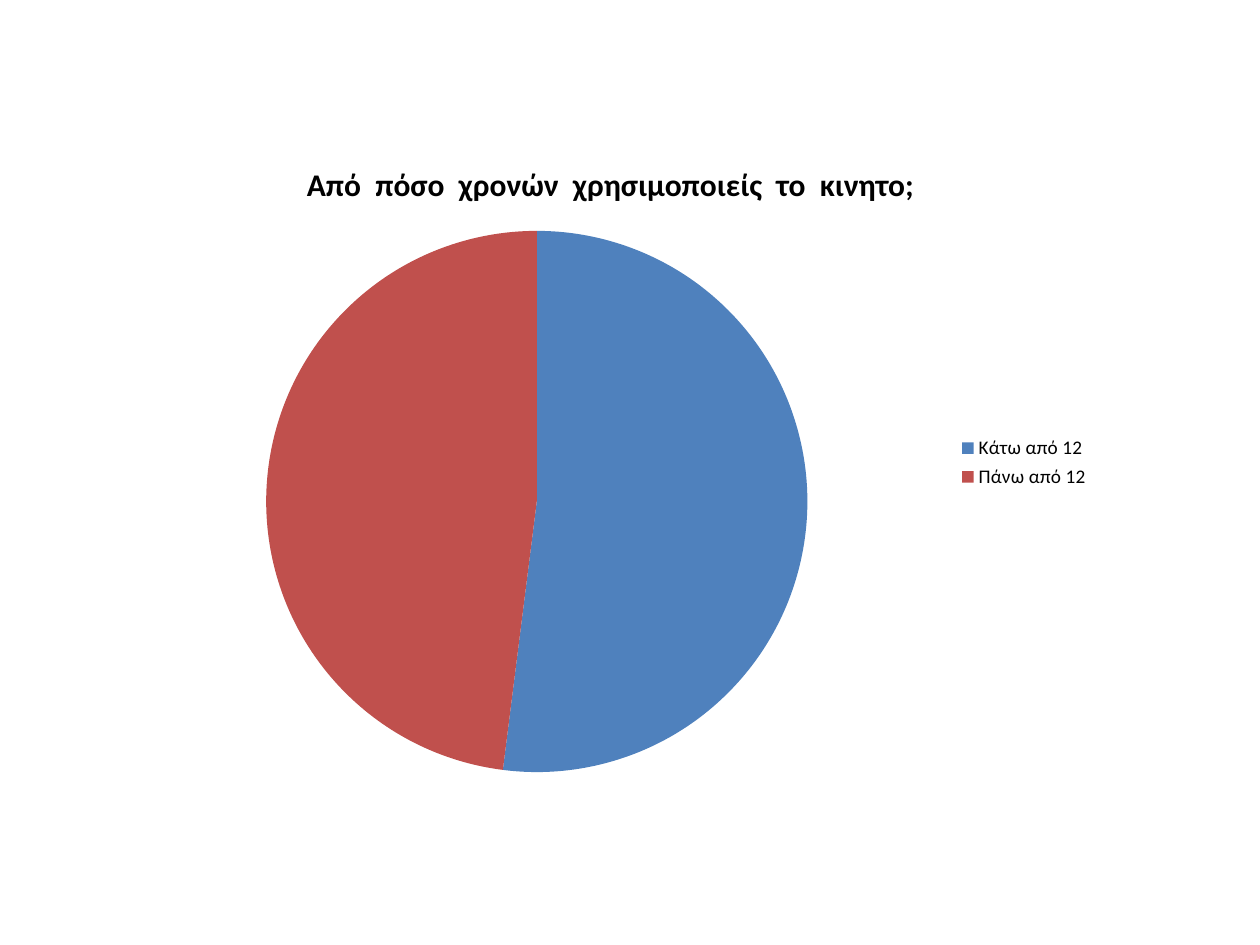
"""Build a slide with a pie chart of the age at which mobile phone use began."""
from lxml.etree import SubElement
from pptx import Presentation
from pptx.chart.data import CategoryChartData
from pptx.dml.color import RGBColor
from pptx.enum.chart import XL_CHART_TYPE, XL_LEGEND_POSITION
from pptx.oxml.ns import qn
from pptx.util import Cm, Pt

BLUE = RGBColor(0x4F, 0x81, 0xBD)
RED = RGBColor(0xC0, 0x50, 0x4D)
BLACK = RGBColor(0, 0, 0)
FONT = "Calibri"

QUESTION = "Από  πόσο  χρονών  χρησιμοποιείς  το  κινητο;"
ANSWERS = [("Κάτω από 12", 52, BLUE), ("Πάνω από 12", 48, RED)]
PIE_AREA = {"x": 0.15, "y": 0.14, "w": 0.55, "h": 0.84}


def style(font, size, bold=False):
    font.name = FONT
    font.size = Pt(size)
    font.bold = bold
    font.color.rgb = BLACK


def place_plot(chart, area):
    plot_area = chart.element.find(".//" + qn("c:plotArea"))
    for old_layout in plot_area.findall(qn("c:layout")):
        plot_area.remove(old_layout)
    layout = SubElement(plot_area, qn("c:layout"))
    plot_area.insert(0, layout)
    manual = SubElement(layout, qn("c:manualLayout"))
    settings = {"layoutTarget": "inner", "xMode": "edge", "yMode": "edge", **area}
    for name, value in settings.items():
        SubElement(manual, qn(f"c:{name}")).set("val", str(value))


def add_answer_chart(slide):
    data = CategoryChartData()
    data.categories = [label for label, _, _ in ANSWERS]
    data.add_series(QUESTION, [share for _, share, _ in ANSWERS])
    chart = slide.shapes.add_chart(
        XL_CHART_TYPE.PIE, Cm(2.39), Cm(2.77), Cm(19.84), Cm(13.11), data
    ).chart
    style(chart.font, 10)

    chart.has_title = True
    chart.chart_title.include_in_layout = False
    run = chart.chart_title.text_frame.paragraphs[0].add_run()
    run.text = QUESTION
    style(run.font, 18, bold=True)

    chart.has_legend = True
    chart.legend.position = XL_LEGEND_POSITION.RIGHT
    chart.legend.include_in_layout = False
    style(chart.legend.font, 11)

    plot = chart.plots[0]
    plot.vary_by_categories = True
    for index, (_, _, color) in enumerate(ANSWERS):
        fill = plot.series[0].points[index].format.fill
        fill.solid()
        fill.fore_color.rgb = color
    place_plot(chart, PIE_AREA)


def main():
    presentation = Presentation()
    presentation.slide_width = Cm(25.4)
    presentation.slide_height = Cm(19.05)
    slide = presentation.slides.add_slide(presentation.slide_layouts[6])
    add_answer_chart(slide)
    presentation.save("out.pptx")


if __name__ == "__main__":
    main()
